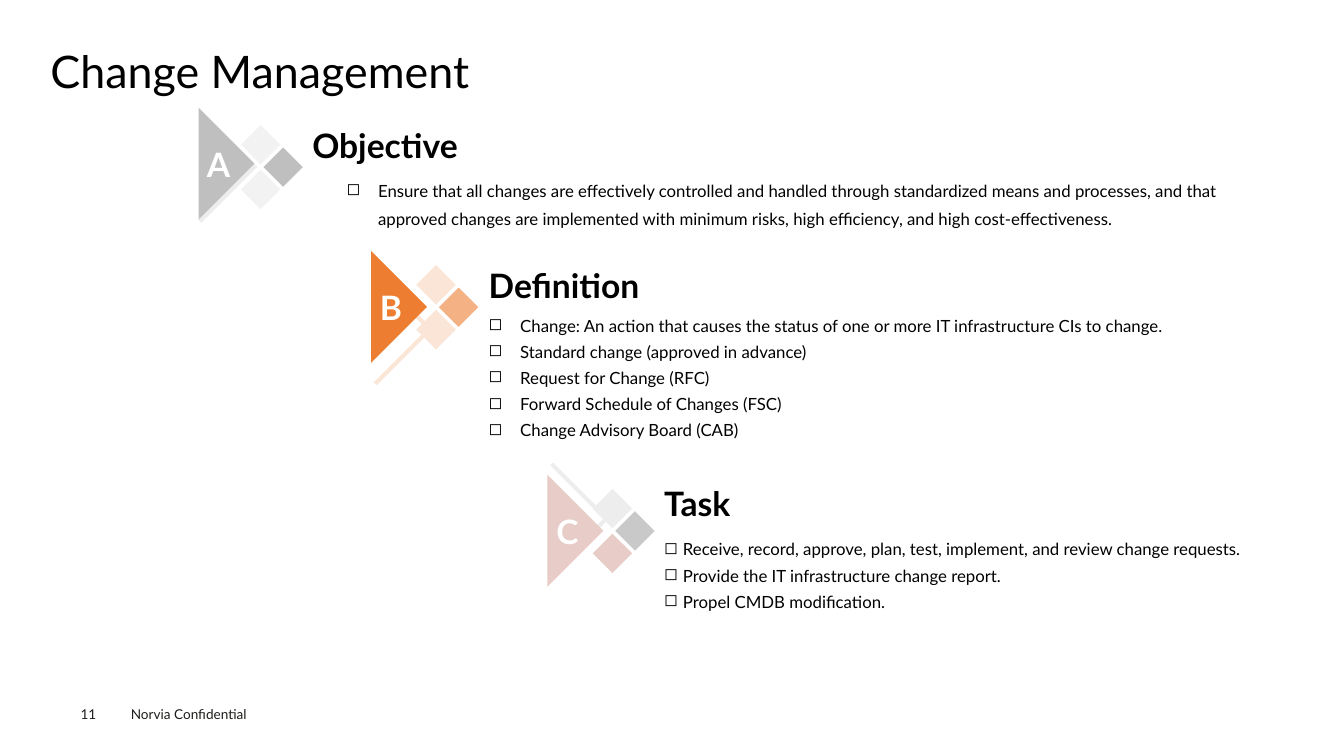
import pptx
import pptx.dml.color
import pptx.enum.shapes
import pptx.enum.text
import pptx.oxml.ns
import pptx.util
import lxml.etree
from dataclasses import dataclass
from typing import Any

Pt = pptx.util.Pt
Anchor = pptx.enum.text.MSO_ANCHOR
Align = pptx.enum.text.PP_ALIGN
Point = tuple[float, float]
Box = tuple[float, float, float, float]


@dataclass(frozen=True)
class Theme:
    font: str = "Lato"
    black: str = "000000"
    white: str = "FFFFFF"
    footer: str = "1D1D1B"
    title_size: float = 32
    heading_size: float = 24
    body_size: float = 12
    footer_size: float = 9.7


@dataclass(frozen=True)
class Section:
    letter: str
    heading: str
    items: tuple[str, ...]
    triangle: Point
    ribbon: Point
    diamonds: Point
    heading_at: Point
    body: Box
    hanging: float
    margin: float
    line_spacing: float
    triangle_color: str
    ribbon_color: str
    diamond_colors: tuple[str, str, str]


THEME = Theme()
DIAMOND_SIZE = 28.1
DIAMOND_OFFSETS: tuple[Point, ...] = ((0, 0), (0, 32), (16.1, 16))
TRIANGLE: tuple[Point, ...] = ((0, 0), (40, 40), (0, 80))
RIBBON: tuple[Point, ...] = ((2, 0), (42, 40), (2, 80), (0, 78), (38, 40), (0, 2))
NO_MARGINS = dict.fromkeys(("margin_left", "margin_top", "margin_right", "margin_bottom"), 0)

SECTIONS = (
    Section(
        "A", "Objective",
        ("Ensure that all changes are effectively controlled and handled through standardized means "
         "and processes, and that approved changes are implemented with minimum risks, high "
         "efficiency, and high cost-effectiveness.",),
        (141.8, 77), (141.8, 79.2), (172.1, 89.3), (216, 79.2), (204.5, 119.5, 712, 47.5),
        22.5, 58.5, 1.4, "BFBFBF", "EDEDED", ("F2F2F2", "F2F2F2", "BFBFBF"),
    ),
    Section(
        "B", "Definition",
        ("Change: An action that causes the status of one or more IT infrastructure CIs to change.",
         "Standard change (approved in advance)",
         "Request for Change (RFC)",
         "Forward Schedule of Changes (FSC)",
         "Change Advisory Board (CAB)"),
        (265, 179.3), (267.1, 195.1), (297.4, 189.4), (342, 179.3), (342, 217.4, 525, 107.3),
        22.5, 22.5, 1.3, "ED7D31", "FBE5D6", ("FBE5D6", "FBE5D6", "F4B183"),
    ),
    Section(
        "C", "Task",
        ("Receive, record, approve, plan, test, implement, and review change requests.",
         "Provide the IT infrastructure change report.",
         "Propel CMDB modification."),
        (391, 339.1), (393.1, 330.5), (423.4, 349.2), (467.3, 334.8), (467.3, 377.3, 449.3, 82.8),
        13.5, 13.5, 1.3, "E7CCC7", "EDEDED", ("EDEDED", "E7CCC7", "C9C9C9"),
    ),
)


def apply_format(target: Any, values: dict[str, Any]) -> None:
    for name, value in values.items():
        setattr(target, name, value)


def color(value: str) -> pptx.dml.color.RGBColor:
    return pptx.dml.color.RGBColor.from_string(value)


def write_run(paragraph: Any, text: str, size: float, text_color: str, bold: bool = False) -> None:
    run = paragraph.add_run()
    run.text = text
    apply_format(run.font, {"name": THEME.font, "size": Pt(size), "bold": bold})
    run.font.color.rgb = color(text_color)


def paint(shape: Any, fill: str) -> None:
    shape.shadow.inherit = False
    shape.fill.solid()
    shape.fill.fore_color.rgb = color(fill)
    shape.line.fill.background()


def add_text_box(slide: Any, box: Box, frame_format: dict[str, Any]) -> Any:
    shape = slide.shapes.add_textbox(*map(Pt, box))
    apply_format(shape.text_frame, {"word_wrap": True} | frame_format)
    return shape.text_frame


def add_outline(slide: Any, origin: Point, points: tuple[Point, ...], fill: str) -> Any:
    left, top = origin
    vertices = [(Pt(left + x), Pt(top + y)) for x, y in points]
    builder = slide.shapes.build_freeform(*vertices[0], scale=1.0)
    builder.add_line_segments(vertices[1:], close=True)
    shape = builder.convert_to_shape()
    paint(shape, fill)
    return shape


def add_bullet(paragraph: Any, margin: float, hanging: float) -> None:
    properties = paragraph._p.get_or_add_pPr()
    properties.set("marL", str(Pt(margin)))
    properties.set("indent", str(-Pt(hanging)))
    bullet = lxml.etree.SubElement(properties, pptx.oxml.ns.qn("a:buChar"))
    bullet.set("char", "◻")


def add_marker(slide: Any, section: Section) -> None:
    left, top = section.diamonds
    for (x, y), fill in zip(DIAMOND_OFFSETS, section.diamond_colors):
        diamond = slide.shapes.add_shape(
            pptx.enum.shapes.MSO_SHAPE.DIAMOND,
            Pt(left + x), Pt(top + y), Pt(DIAMOND_SIZE), Pt(DIAMOND_SIZE),
        )
        paint(diamond, fill)
    add_outline(slide, section.ribbon, RIBBON, section.ribbon_color)
    triangle = add_outline(slide, section.triangle, TRIANGLE, section.triangle_color)
    frame = triangle.text_frame
    apply_format(frame, NO_MARGINS | {"margin_right": Pt(11.5), "vertical_anchor": Anchor.MIDDLE})
    paragraph = frame.paragraphs[0]
    paragraph.alignment = Align.CENTER
    write_run(paragraph, section.letter, THEME.heading_size, THEME.white, True)


def add_section(slide: Any, section: Section) -> None:
    add_marker(slide, section)
    body = add_text_box(slide, section.body, {})
    for index, item in enumerate(section.items):
        paragraph = body.add_paragraph() if index else body.paragraphs[0]
        add_bullet(paragraph, section.margin, section.hanging)
        paragraph.line_spacing = section.line_spacing
        write_run(paragraph, item, THEME.body_size, THEME.black)
    heading = add_text_box(slide, (*section.heading_at, 275.8, 42.5), {"vertical_anchor": Anchor.BOTTOM})
    write_run(heading.paragraphs[0], section.heading, THEME.heading_size, THEME.black, True)


def add_title(slide: Any) -> None:
    title = slide.shapes.title
    apply_format(title, {"left": Pt(36), "top": Pt(35.3), "width": Pt(889.2), "height": Pt(38.9)})
    apply_format(title.text_frame, NO_MARGINS | {
        "word_wrap": True,
        "vertical_anchor": Anchor.TOP,
        "auto_size": pptx.enum.text.MSO_AUTO_SIZE.NONE,
    })
    paragraph = title.text_frame.paragraphs[0]
    apply_format(paragraph, {"alignment": Align.LEFT, "line_spacing": 0.9})
    write_run(paragraph, "Change Management", THEME.title_size, THEME.black)


def add_footer(slide: Any) -> None:
    notice = add_text_box(slide, (86.4, 500.4, 115.2, 19.4), {})
    write_run(notice.paragraphs[0], "Norvia Confidential", THEME.footer_size, THEME.footer)
    number = add_text_box(slide, (57.6, 504, 39.6, 11.5), NO_MARGINS)
    write_run(number.paragraphs[0], "11", THEME.footer_size, THEME.footer)


def main() -> None:
    presentation = pptx.Presentation()
    apply_format(presentation, {"slide_width": Pt(960), "slide_height": Pt(540)})
    slide = presentation.slides.add_slide(presentation.slide_layouts.get_by_name("Title Only"))
    add_footer(slide)
    add_title(slide)
    for section in SECTIONS:
        add_section(slide, section)
    presentation.save("out.pptx")


if __name__ == "__main__":
    main()
